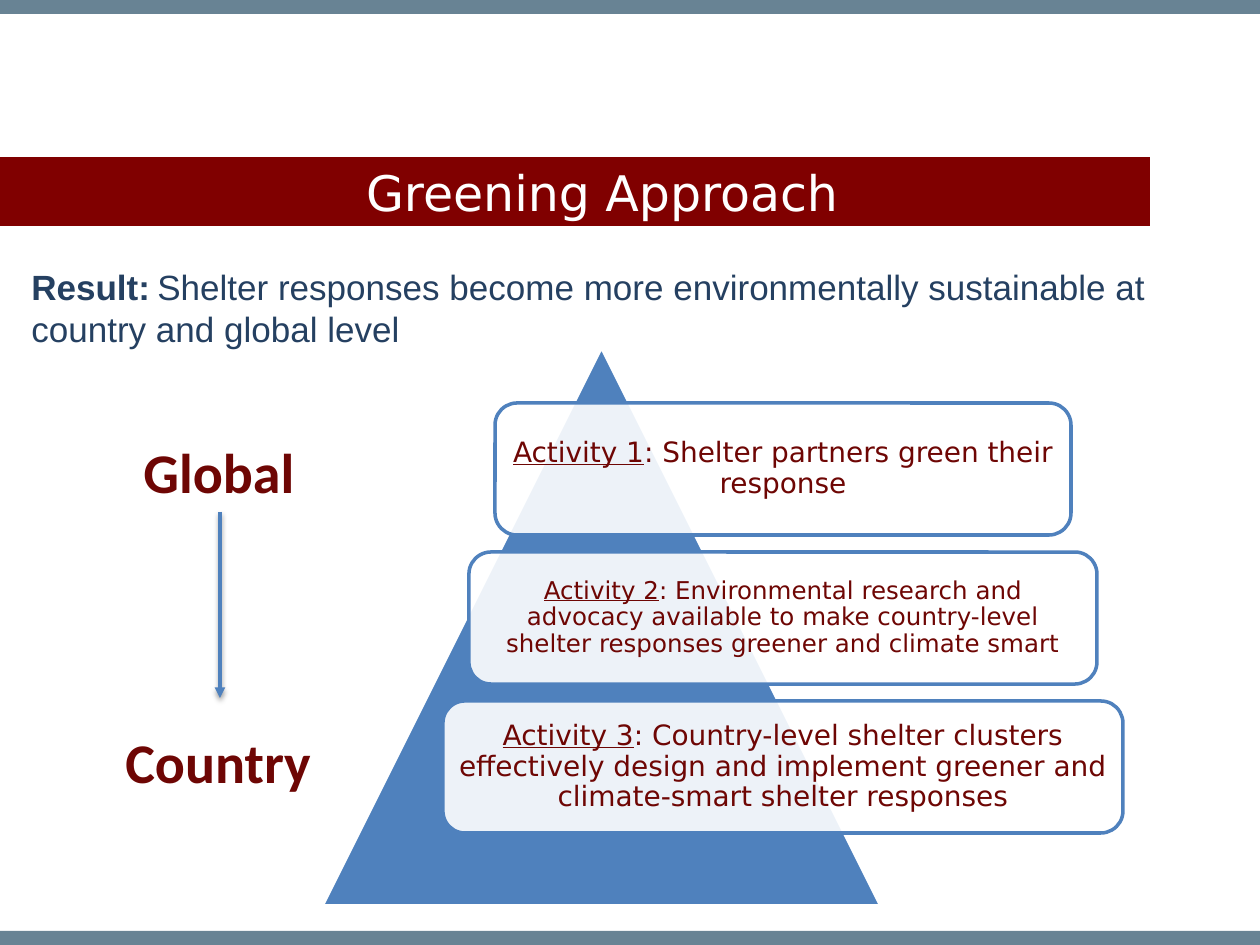
from lxml.etree import SubElement
from pptx import Presentation
from pptx.dml.color import RGBColor
from pptx.enum.shapes import MSO_CONNECTOR, MSO_SHAPE
from pptx.enum.text import MSO_ANCHOR, PP_ALIGN
from pptx.oxml import parse_xml
from pptx.oxml.ns import nsdecls, qn
from pptx.util import Emu, Pt

WHITE = RGBColor(0xFF, 0xFF, 0xFF)
MAROON = RGBColor(0x80, 0x00, 0x00)
DARK_RED = RGBColor(0x6E, 0x06, 0x04)
SLATE = RGBColor(0x68, 0x83, 0x94)
NAVY = RGBColor(0x25, 0x40, 0x61)
BLUE = RGBColor(0x4F, 0x81, 0xBD)


def px(*lengths):
    return [Emu(round(length * 914400 / 126)) for length in lengths]


def add_run(paragraph, text, font_name, size, color, bold=False, underline=False):
    run = paragraph.add_run()
    run.text = text
    run.font.name = font_name
    run.font.size = Pt(size)
    run.font.color.rgb = color
    run.font.bold = bold
    run.font.underline = underline


presentation = Presentation()
presentation.slide_width, presentation.slide_height = px(1260, 945)
slide = presentation.slides.add_slide(presentation.slide_layouts[5])
shapes = slide.shapes

bands = [
    (0, 157, 1150, 69, MAROON),
    (0, 0, 1260, 14, SLATE),
    (0, 931, 1260, 14, SLATE),
]
for left, top, width, height, color in bands:
    band = shapes.add_shape(MSO_SHAPE.RECTANGLE, *px(left, top, width, height))
    band.shadow.inherit = False
    band.fill.solid()
    band.fill.fore_color.rgb = color
    band.line.fill.background()

title = shapes.title
title.left, title.top, title.width, title.height = px(35, 113, 1134, 158)
title.text_frame.vertical_anchor = MSO_ANCHOR.MIDDLE
paragraph = title.text_frame.paragraphs[0]
paragraph.alignment = PP_ALIGN.CENTER
add_run(paragraph, "Greening Approach", "DejaVu Sans", 28, WHITE)
shapes._spTree.append(title._element)

result_box = shapes.add_textbox(*px(19, 259, 1222, 105))
result_box.text_frame.word_wrap = True
paragraph = result_box.text_frame.paragraphs[0]
add_run(paragraph, "Result:\t", "Arial", 20, NAVY, bold=True)
add_run(
    paragraph,
    "Shelter responses become more environmentally sustainable at country and global level",
    "Arial", 20, NAVY,
)

triangle = shapes.add_shape(MSO_SHAPE.ISOSCELES_TRIANGLE, *px(322, 347, 559, 559))
triangle.shadow.inherit = False
triangle.fill.solid()
triangle.fill.fore_color.rgb = BLUE
triangle.line.color.rgb = WHITE
triangle.line.width = Pt(2)

activities = [
    ("Activity 1", ": Shelter partners green their response", 16),
    ("Activity 2", ": Environmental research and advocacy available to make "
     "country-level shelter responses greener and climate smart", 14),
    ("Activity 3", ": Country-level shelter clusters effectively design and "
     "implement greener and climate-smart shelter responses", 16),
]
for index, (label, description, size) in enumerate(activities):
    card = shapes.add_shape(
        MSO_SHAPE.ROUNDED_RECTANGLE,
        *px(495 - 26 * index, 403 + 149 * index, 576 + 52 * index, 132),
    )
    card.shadow.inherit = False
    card.fill.solid()
    card.fill.fore_color.rgb = WHITE
    fill_color = card._element.spPr.find(qn("a:solidFill"))[0]
    SubElement(fill_color, qn("a:alpha"), val="90000")
    card.line.color.rgb = BLUE
    card.line.width = Pt(2)
    text_frame = card.text_frame
    text_frame.word_wrap = True
    text_frame.vertical_anchor = MSO_ANCHOR.MIDDLE
    (text_frame.margin_left, text_frame.margin_top,
     text_frame.margin_right, text_frame.margin_bottom) = px(8, 8, 8, 8)
    paragraph = text_frame.paragraphs[0]
    paragraph.alignment = PP_ALIGN.CENTER
    paragraph.line_spacing = 0.9
    add_run(paragraph, label, "DejaVu Sans", size, DARK_RED, underline=True)
    add_run(paragraph, description, "DejaVu Sans", size, DARK_RED)

levels = [("Global", 131, 431, 178), ("Country", 113, 721, 213)]
for name, left, top, width in levels:
    level_box = shapes.add_textbox(*px(left, top, width, 81))
    level_box.text_frame.word_wrap = False
    add_run(level_box.text_frame.paragraphs[0], name, "Calibri", 32, DARK_RED, bold=True)

arrow = shapes.add_connector(MSO_CONNECTOR.STRAIGHT, *px(220, 512, 220, 698))
arrow.line.color.rgb = BLUE
arrow.line.width = Pt(2)
SubElement(arrow.line._get_or_add_ln(), qn("a:tailEnd"), type="triangle")
arrow._element.spPr.append(parse_xml(
    f'<a:effectLst {nsdecls("a")}>'
    '<a:outerShdw blurRad="39370" dist="20320" dir="5400000" rotWithShape="0">'
    '<a:srgbClr val="000000"><a:alpha val="38000"/></a:srgbClr>'
    '</a:outerShdw></a:effectLst>'
))

presentation.save("out.pptx")
